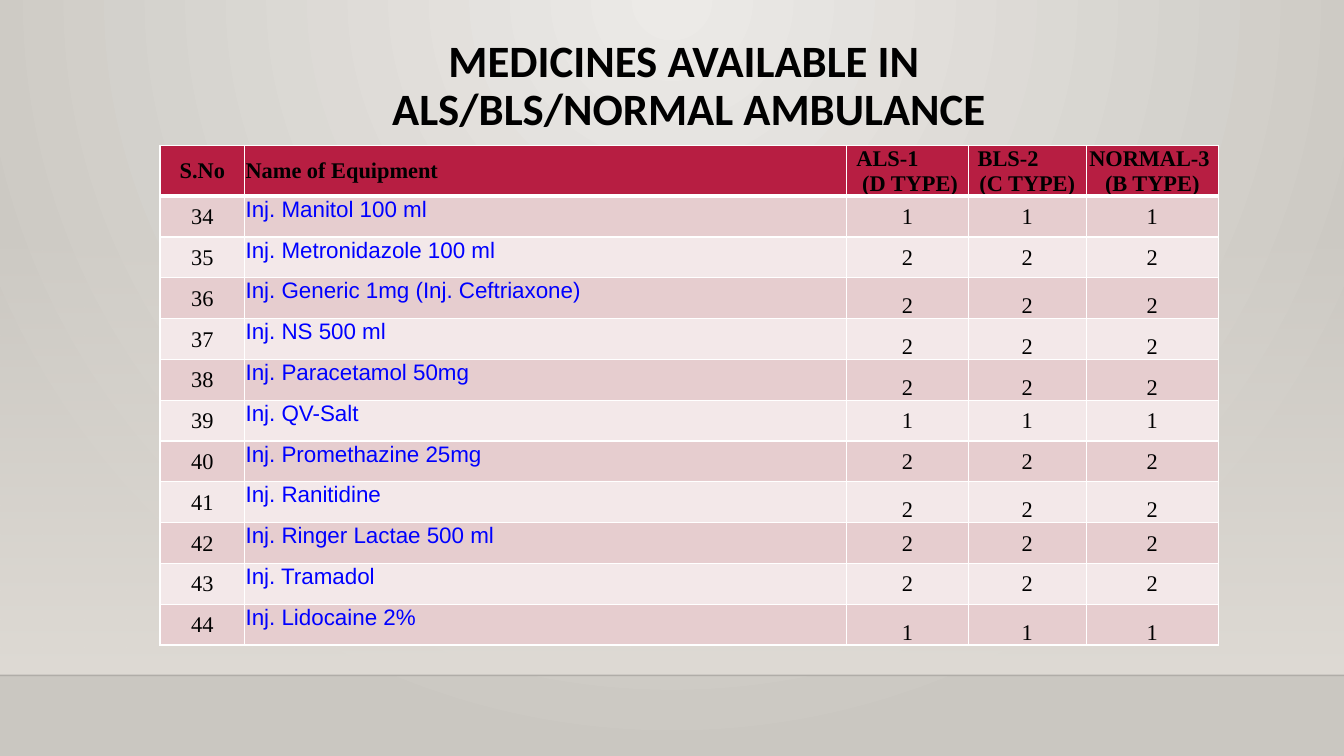
"""Build the slide that lists the medicines carried in each ambulance type."""
from lxml import etree
from pptx import Presentation
from pptx.dml.color import RGBColor
from pptx.enum import shapes, text
from pptx.oxml import ns
from pptx.util import Pt

BLACK = RGBColor(0x00, 0x00, 0x00)
WHITE = RGBColor(0xFF, 0xFF, 0xFF)
BLUE = RGBColor(0x00, 0x00, 0xFF)
CRIMSON = RGBColor(0xB7, 0x1E, 0x42)
ROSE = RGBColor(0xE6, 0xCD, 0xCF)
PALE_ROSE = RGBColor(0xF3, 0xE8, 0xE9)
GLOW = RGBColor(0xEC, 0xEA, 0xE7)
STONE = RGBColor(0xCA, 0xC7, 0xC1)
SAND = RGBColor(0xDF, 0xDB, 0xD5)

PAGE_WIDTH, PAGE_HEIGHT = 960, 540
FLOOR = 482.4
TABLE_LEFT, TABLE_TOP = 114.3, 103.7
COLUMN_WIDTHS = [60.5, 429.8, 87.1, 84.3, 94.3]
HEADER_HEIGHT, ROW_HEIGHT = 36.5, 29.15

LEFT, CENTER = text.PP_ALIGN.LEFT, text.PP_ALIGN.CENTER
TOP, MIDDLE, BOTTOM = (
    text.MSO_ANCHOR.TOP, text.MSO_ANCHOR.MIDDLE, text.MSO_ANCHOR.BOTTOM)

FIRST_NUMBER = 34
MEDICINES = [
    ("Inj. Manitol 100 ml", 1, MIDDLE),
    ("Inj. Metronidazole 100 ml", 2, MIDDLE),
    ("Inj. Generic 1mg (Inj. Ceftriaxone)", 2, BOTTOM),
    ("Inj. NS 500 ml", 2, BOTTOM),
    ("Inj. Paracetamol 50mg", 2, BOTTOM),
    ("Inj. QV-Salt", 1, MIDDLE),
    ("Inj. Promethazine 25mg", 2, MIDDLE),
    ("Inj. Ranitidine", 2, BOTTOM),
    ("Inj. Ringer Lactae 500 ml", 2, MIDDLE),
    ("Inj. Tramadol", 2, MIDDLE),
    ("Inj. Lidocaine 2%", 1, BOTTOM),
]


def add_xml(parent, tag, **attributes):
    """Append a drawing element with the given attributes."""
    return etree.SubElement(parent, ns.qn(tag), attributes)


def write(para, content, font="Times New Roman", size=16, color=BLACK,
          bold=False, align=CENTER, indent=0):
    """Fill a paragraph with formatted text."""
    para.alignment = align
    if indent:
        para._p.get_or_add_pPr().set("marL", str(Pt(indent)))
    para.text = content
    for span in para.runs:
        span.font.name = font
        span.font.size = Pt(size)
        span.font.bold = bold
        span.font.color.rgb = color


def set_gradient(fill, start, end):
    """Turn a fill into a two-stop gradient and return its element."""
    fill.gradient()
    for stop, color, position in zip(fill.gradient_stops, (start, end), (0, 1)):
        stop.color.rgb = color
        stop.position = position
    return fill._xPr.find(ns.qn("a:gradFill"))


def set_alpha(color_parent, percent):
    """Set the opacity of the first RGB colour inside an element."""
    color = color_parent.find(".//" + ns.qn("a:srgbClr"))
    add_xml(color, "a:alpha", val=str(percent * 1000))


def add_backdrop(page):
    """Draw the radial background, the wall fade and the floor line."""
    glow = set_gradient(page.background.fill, GLOW, STONE)
    glow.remove(glow.find(ns.qn("a:lin")))
    circle = add_xml(glow, "a:path", **{"path": "circle"})
    add_xml(circle, "a:fillToRect", l="43000", t="0", r="43000", b="100000")

    wall_top = 159.1
    wall = page.shapes.add_shape(
        shapes.MSO_SHAPE.RECTANGLE, 0, Pt(wall_top),
        Pt(PAGE_WIDTH), Pt(FLOOR - wall_top))
    wall.shadow.inherit = False
    wall.line.fill.background()
    fade = set_gradient(wall.fill, SAND, SAND)
    set_alpha(fade, 0)
    fade.find(ns.qn("a:lin")).set("ang", "5400000")

    edge = page.shapes.add_connector(
        shapes.MSO_CONNECTOR.STRAIGHT, 0, Pt(FLOOR), Pt(PAGE_WIDTH), Pt(FLOOR))
    edge.line.color.rgb = BLACK
    edge.line.width = Pt(1)
    properties = edge._element.spPr
    set_alpha(properties, 20)
    add_xml(properties, "a:effectLst")


def add_title(page):
    """Place and format the slide title."""
    title = page.shapes.title
    title.left, title.top = Pt(TABLE_LEFT), Pt(20.9)
    title.width, title.height = Pt(sum(COLUMN_WIDTHS)), Pt(82.8)
    frame = title.text_frame
    frame.word_wrap = True
    frame.auto_size = text.MSO_AUTO_SIZE.NONE
    frame.vertical_anchor = MIDDLE
    para = frame.paragraphs[0]
    para.line_spacing = 0.9
    write(para, "MEDICINES AVAILABLE IN \vALS/BLS/NORMAL AMBULANCE",
          font="Calibri", size=32, bold=True)


def format_cell(cell, fill, anchor, top=1, bottom=1):
    """Set the fill, borders, margins and anchor of a table cell."""
    cell.margin_left = cell.margin_right = cell.margin_top = Pt(0.7)
    cell.margin_bottom = 0
    cell.vertical_anchor = anchor
    properties = cell._tc.get_or_add_tcPr()
    for side, width in zip("LRTB", (1, 1, top, bottom)):
        border = add_xml(properties, "a:ln" + side, w=str(Pt(width)))
        solid = add_xml(border, "a:solidFill")
        add_xml(solid, "a:srgbClr", val=str(WHITE))
    cell.fill.solid()
    cell.fill.fore_color.rgb = fill


def fill_header(table):
    """Write the header row."""
    headings = [
        ([("S.No", {})], MIDDLE),
        ([("Name of Equipment", {"align": LEFT})], MIDDLE),
        ([("ALS-1", {"align": LEFT, "indent": 6.5}), (" (D TYPE)", {})], MIDDLE),
        ([("BLS-2", {"align": LEFT, "indent": 6}), ("(C TYPE)", {})], MIDDLE),
        ([("NORMAL-3 ", {}), ("(B TYPE)", {})], BOTTOM),
    ]
    for column, (lines, anchor) in enumerate(headings):
        cell = table.cell(0, column)
        format_cell(cell, CRIMSON, anchor, bottom=3)
        frame = cell.text_frame
        for index, (line, style) in enumerate(lines):
            para = frame.add_paragraph() if index else frame.paragraphs[0]
            write(para, line, bold=True, **style)


def fill_medicines(table):
    """Write one banded row for each medicine."""
    name_style = {"font": "Arial", "color": BLUE, "align": LEFT}
    for row, (name, count, anchor) in enumerate(MEDICINES, 1):
        number = FIRST_NUMBER + row - 1
        entries = [(str(number), MIDDLE, {}), (name, TOP, name_style)]
        entries += [(str(count), anchor, {})] * 3
        for column, (content, position, style) in enumerate(entries):
            cell = table.cell(row, column)
            format_cell(cell, ROSE if row % 2 else PALE_ROSE, position,
                        top=3 if row == 1 else 1)
            write(cell.text_frame.paragraphs[0], content, **style)


def add_medicine_table(page):
    """Add the table with its column widths and row heights."""
    heights = [HEADER_HEIGHT] + [ROW_HEIGHT] * len(MEDICINES)
    table = page.shapes.add_table(
        len(heights), len(COLUMN_WIDTHS), Pt(TABLE_LEFT), Pt(TABLE_TOP),
        Pt(sum(COLUMN_WIDTHS)), Pt(sum(heights))).table
    for column, width in zip(table.columns, COLUMN_WIDTHS):
        column.width = Pt(width)
    for row, height in zip(table.rows, heights):
        row.height = Pt(height)
    fill_header(table)
    fill_medicines(table)


def main():
    """Build and save the deck."""
    deck = Presentation()
    deck.slide_width, deck.slide_height = Pt(PAGE_WIDTH), Pt(PAGE_HEIGHT)
    page = deck.slides.add_slide(deck.slide_layouts[5])
    add_backdrop(page)
    add_title(page)
    add_medicine_table(page)
    deck.save("out.pptx")


if __name__ == "__main__":
    main()
